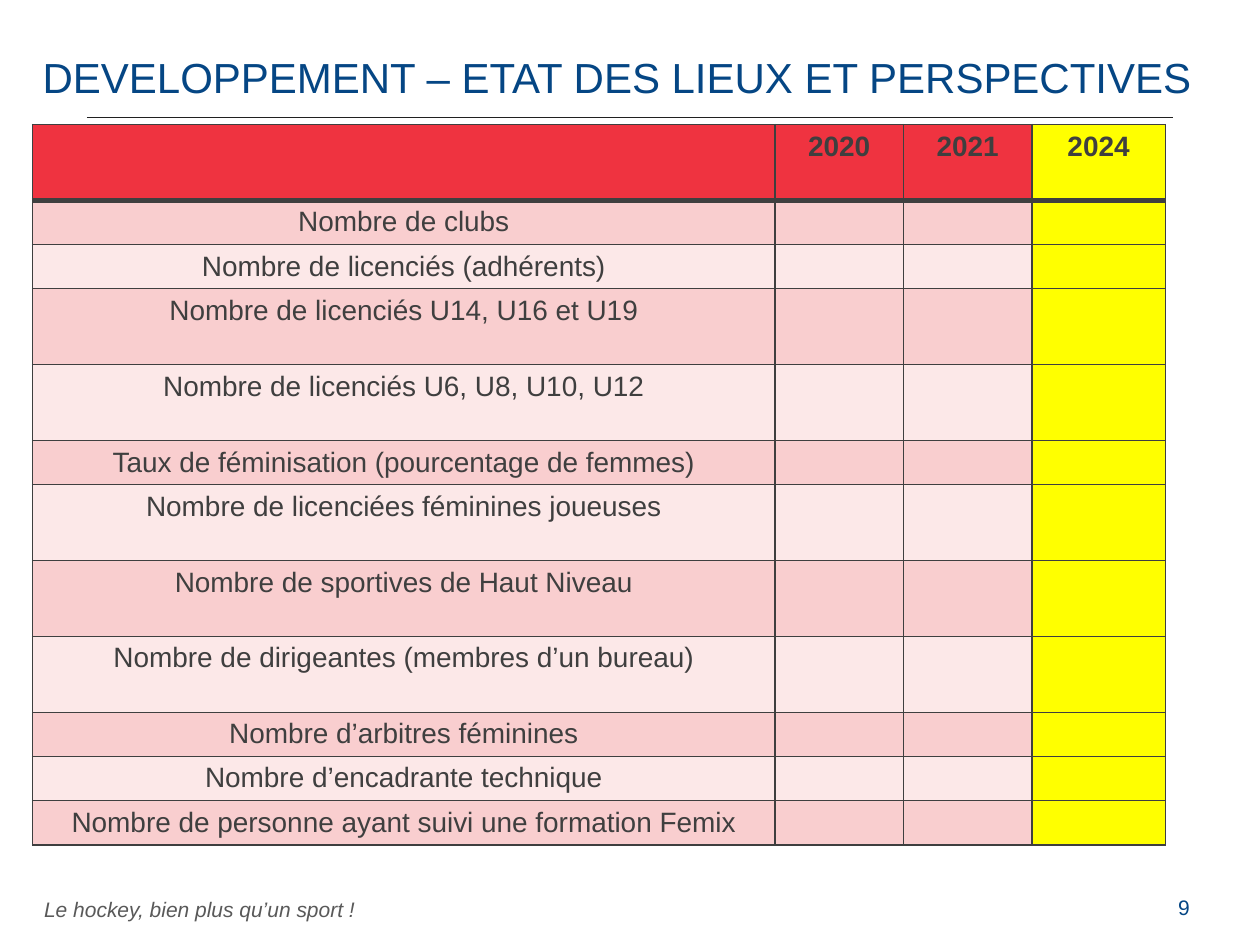
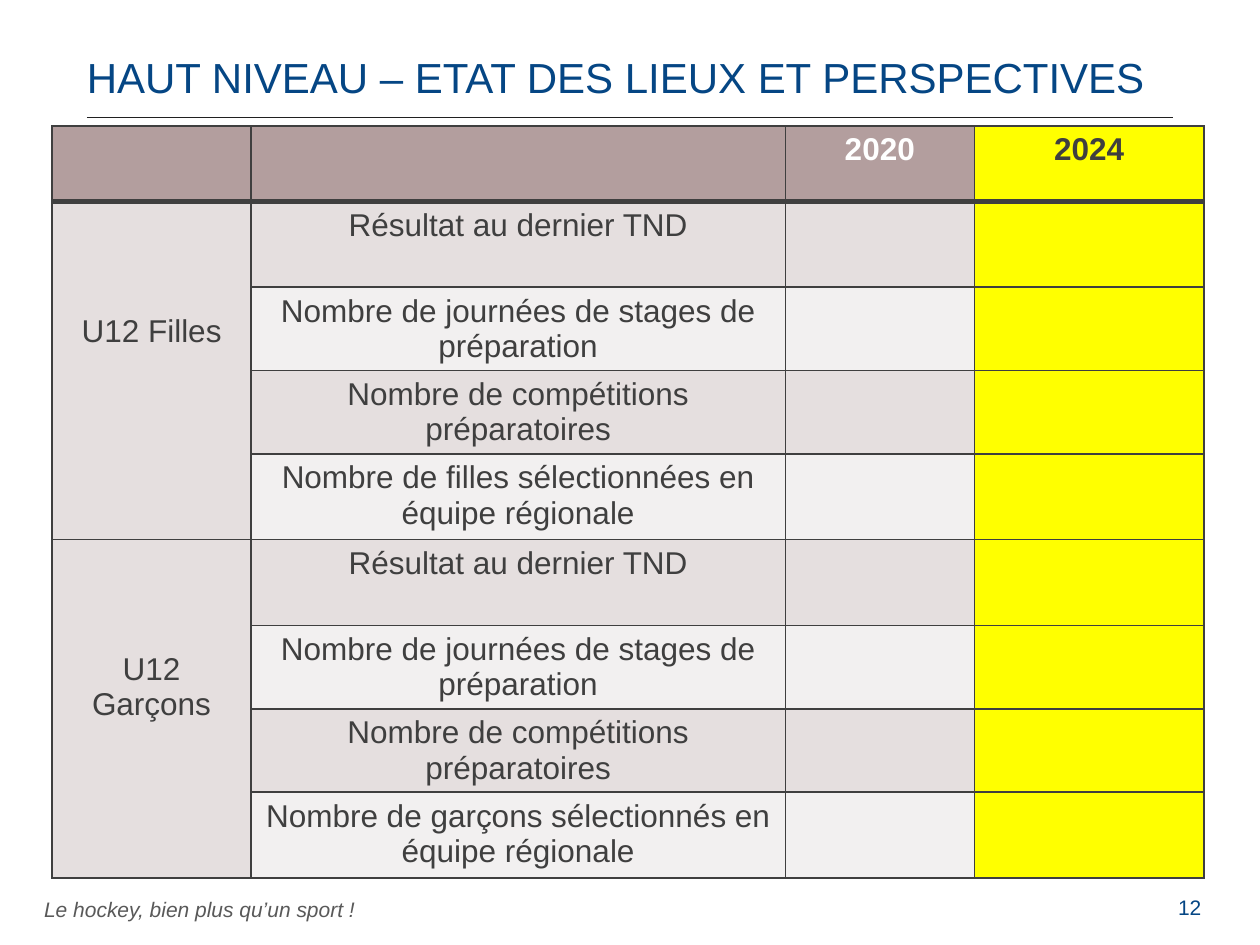
from dataclasses import dataclass

from lxml.etree import SubElement
from pptx import Presentation
from pptx.dml.color import RGBColor
from pptx.enum.text import MSO_ANCHOR, PP_ALIGN
from pptx.oxml.ns import qn
from pptx.util import Cm, Pt


@dataclass(frozen=True)
class Theme:
    font: str = "Arial"
    blue: str = "054684"
    grey: str = "595959"
    dark: str = "3F3F3F"
    rule: str = "202020"
    white: str = "FFFFFF"
    target: str = "FFFF00"
    title_size: int = 24
    footer_size: int = 12


THEME = Theme()
FOOTER = "Le hockey, bien plus qu’un sport !"
SHORT, TALL = 0.89, 1.53  # row heights of the development table, in cm

DEVELOPMENT = dict(
    title="DEVELOPPEMENT – ETAT DES LIEUX ET PERSPECTIVES",
    title_left=0.86, title_width=24.1, number=9,
    left=0.66, top=2.51, columns=[14.96, 2.59, 2.59, 2.69],
    header=["", "2020", "2021", "2024"], header_height=TALL,
    header_fill="EF3340", header_color=THEME.dark,
    bands=["F9CECF", "FCE8E8"], size=16, groups=[],
    rows=[
        ("Nombre de clubs", SHORT),
        ("Nombre de licenciés (adhérents)", SHORT),
        ("Nombre de licenciés U14, U16 et U19", TALL),
        ("Nombre de licenciés U6, U8, U10, U12", TALL),
        ("Taux de féminisation (pourcentage de femmes)", SHORT),
        ("Nombre de licenciées féminines joueuses", TALL),
        ("Nombre de sportives de Haut Niveau", TALL),
        ("Nombre de dirigeantes (membres d’un bureau)", TALL),
        ("Nombre d’arbitres féminines", SHORT),
        ("Nombre d’encadrante technique", SHORT),
        ("Nombre de personne ayant suivi une formation Femix", SHORT),
    ],
)

SELECTIONS = ["Nombre de filles sélectionnées en équipe régionale",
              "Nombre de garçons sélectionnés en équipe régionale"]
HIGH_LEVEL = dict(
    title="HAUT NIVEAU – ETAT DES LIEUX ET PERSPECTIVES",
    title_left=1.75, title_width=21.9, number=12,
    left=1.05, top=2.54, columns=[4.01, 10.77, 3.81, 4.63],
    header=["", "", "2020", "2024"], header_height=1.52,
    header_fill="B39E9E", header_color=THEME.white,
    bands=["E5DFDF", "F2F0F0"], size=18, groups=["U12 Filles", "U12 Garçons"],
    rows=[row for selection in SELECTIONS for row in (
        ("Résultat au dernier TND", 1.73),
        ("Nombre de journées de stages de préparation", 1.68),
        ("Nombre de compétitions préparatoires", 1.68),
        (selection, 1.73),
    )],
)


def write(tf, text, *, size, color, bold=False, italic=False, align=None, spacing=None):
    p = tf.paragraphs[0]
    p.alignment = align
    p.line_spacing = spacing
    r = p.add_run()
    r.text = text
    r.font.name, r.font.size = THEME.font, Pt(size)
    r.font.bold, r.font.italic = bold, italic
    r.font.color.rgb = RGBColor.from_string(color)


def add_box(s, left, top, width, height, text, *, anchor=MSO_ANCHOR.TOP,
            margins=(0.25, 0.13, 0.25, 0.13), **style):
    tf = s.shapes.add_textbox(Cm(left), Cm(top), Cm(width), Cm(height)).text_frame
    tf.word_wrap, tf.vertical_anchor = True, anchor
    (tf.margin_left, tf.margin_top,
     tf.margin_right, tf.margin_bottom) = [Cm(m) for m in margins]
    write(tf, text, **style)


def add_frame(s, title, title_left, title_width, number):
    """Add the footer, rule, title and page number."""
    add_box(s, 0.89, 18.08, 7, 0.51, FOOTER, anchor=MSO_ANCHOR.MIDDLE,
            margins=(0, 0, 0, 0), size=THEME.footer_size, color=THEME.grey, italic=True)
    rule = s.shapes.add_connector(1, Cm(1.75), Cm(2.36), Cm(23.65), Cm(2.36))
    rule.line.color.rgb = RGBColor.from_string(THEME.rule)
    rule.line.width = Pt(0.5)
    SubElement(rule._element.spPr, qn("a:effectLst"))
    add_box(s, title_left, 1.02, title_width, 1.32, title, margins=(0, 0.13, 0.25, 0.13),
            size=THEME.title_size, color=THEME.blue, spacing=0.9)
    add_box(s, 23.5, 17.91, 1.19, 1.02, str(number),
            size=THEME.footer_size, color=THEME.blue)


def style_cell(cell, fill, top=1, bottom=1):
    """Set the borders, then the fill, in the order the schema asks for."""
    tc_pr = cell._tc.get_or_add_tcPr()
    for side, width in zip("LRTB", (1, 1, top, bottom)):
        ln = SubElement(tc_pr, qn(f"a:ln{side}"), w=str(Pt(width)))
        SubElement(SubElement(ln, qn("a:solidFill")), qn("a:srgbClr"), val=THEME.dark)
    cell.fill.solid()
    cell.fill.fore_color.rgb = RGBColor.from_string(fill)


def add_indicators(s, left, top, columns, header, header_height, header_fill,
                   header_color, bands, size, groups, rows):
    heights = [header_height] + [height for _, height in rows]
    table = s.shapes.add_table(len(heights), len(columns), Cm(left), Cm(top),
                               Cm(sum(columns)), Cm(sum(heights))).table
    table.first_row = table.horz_banding = False
    for column, width in zip(table.columns, columns):
        column.width = Cm(width)
    for row, height in zip(table.rows, heights):
        row.height = Cm(height)

    label_col, last = (1 if groups else 0), len(columns) - 1
    group_rows = len(rows) // len(groups) if groups else 0
    for i in range(len(heights)):
        for j in range(len(columns)):
            cell = table.cell(i, j)
            cell.margin_bottom = 0  # keeps each row at its set height
            fill = bands[0] if j < label_col else bands[(i - 1) % 2]
            text = rows[i - 1][0] if i and j == label_col else ""
            color = THEME.dark
            if i == 0:
                fill, text = header_fill, header[j]
                color = THEME.dark if j == last else header_color
            elif j < label_col and (i - 1) % group_rows == 0:
                text = groups[(i - 1) // group_rows]
                cell.merge(table.cell(i + group_rows - 1, j))
                cell.margin_top = Cm(2.26)
            style_cell(cell, THEME.target if j == last else fill,
                       top=3 if i == 1 else 1, bottom=1 if i else 3)
            if text:
                write(cell.text_frame, text, size=size, color=color,
                      bold=i == 0, align=PP_ALIGN.CENTER)
            else:
                cell.margin_top = 0


def main():
    prs = Presentation()
    prs.slide_width, prs.slide_height = Cm(25.4), Cm(19.05)
    frame_keys = ("title", "title_left", "title_width", "number")
    for content in (DEVELOPMENT, HIGH_LEVEL):
        s = prs.slides.add_slide(prs.slide_layouts[6])
        add_frame(s, **{k: content[k] for k in frame_keys})
        add_indicators(s, **{k: v for k, v in content.items() if k not in frame_keys})
    prs.save("out.pptx")


if __name__ == "__main__":
    main()
